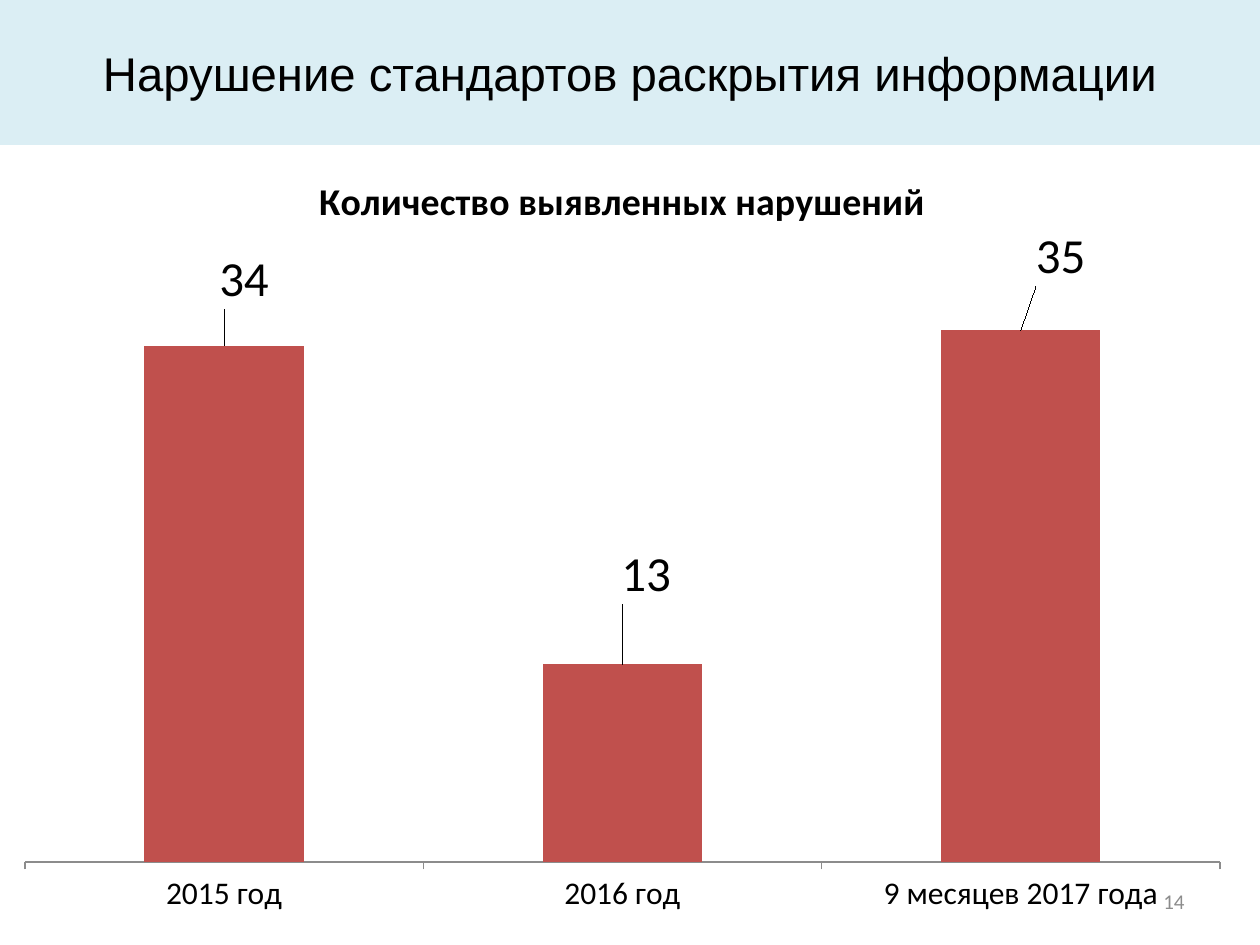
from lxml import etree
from pptx import Presentation
from pptx.chart.data import CategoryChartData
from pptx.dml.color import RGBColor
from pptx.enum import chart as ch, text
from pptx.oxml import ns
from pptx.util import Pt

BLACK = RGBColor(0x00, 0x00, 0x00)
GREY = RGBColor(0x8C, 0x8C, 0x8C)
PALE_BLUE = RGBColor(0xDB, 0xEE, 0xF4)
RED = RGBColor(0xC0, 0x50, 0x4D)


def style(font, size, color=BLACK, name="Calibri", bold=False):
    font.size, font.name, font.bold = Pt(size), name, bold
    font.color.rgb = color


def add_layout(parent, index, **settings):
    """Insert a manual chart layout into parent as the child at index."""
    layout = etree.Element(ns.qn("c:layout"))
    manual = etree.SubElement(layout, ns.qn("c:manualLayout"))
    for key, value in settings.items():
        etree.SubElement(manual, ns.qn(f"c:{key}")).set("val", str(value))
    for old in parent.findall(ns.qn("c:layout")):
        parent.remove(old)
    parent.insert(index, layout)


deck = Presentation()
deck.slide_width, deck.slide_height = Pt(720), Pt(540)
page = deck.slides.add_slide(deck.slide_layouts[5])

# Title band
title = page.shapes.title
title.left, title.top, title.width, title.height = Pt(0), Pt(0), Pt(720), Pt(82.8)
title.fill.solid()
title.fill.fore_color.rgb = PALE_BLUE
title.text_frame.text = "Нарушение стандартов раскрытия информации"
title.text_frame.vertical_anchor = text.MSO_ANCHOR.MIDDLE
heading = title.text_frame.paragraphs[0]
heading.alignment = text.PP_ALIGN.CENTER
style(heading.runs[0].font, 27, name="Arial")

# Column chart
series_name = "Количество выявленных нарушений"
data = CategoryChartData()
data.categories = ["2015 год", "2016 год", "9 месяцев 2017 года"]
data.add_series(series_name, [34, 13, 35])
chart = page.shapes.add_chart(
    ch.XL_CHART_TYPE.COLUMN_CLUSTERED, Pt(0), Pt(82.8), Pt(711.36), Pt(447.84), data
).chart
style(chart.font, 18)
chart.has_legend = False
chart.has_title = True
chart.chart_title.include_in_layout = False
chart.chart_title.text_frame.text = series_name
style(chart.chart_title.text_frame.paragraphs[0].runs[0].font, 21.6, bold=True)

values = chart.value_axis
values.minimum_scale, values.maximum_scale = 0, 40
values.has_major_gridlines = False
values.visible = False
categories = chart.category_axis
categories.major_tick_mark = ch.XL_TICK_MARK.OUTSIDE
categories.format.line.color.rgb = GREY
categories.format.line.width = Pt(0.75)

plot = chart.plots[0]
plot.gap_width = 150
plot.vary_by_categories = False
plot_area = chart.element.find(".//" + ns.qn("c:plotArea"))
add_layout(plot_area, 0, layoutTarget="inner", xMode="edge", yMode="edge",
           x=0.02, y=0.14, w=0.96, h=0.775)

series = plot.series[0]
series.format.fill.solid()
series.format.fill.fore_color.rgb = RED
label_shifts = [(0.016, -0.04), (0.019, -0.07), (0.032, -0.05)]
for index, (x, y) in enumerate(label_shifts):
    label = series.points[index].data_label
    style(label.font, 28)
    label.position = ch.XL_LABEL_POSITION.OUTSIDE_END
labels = series.data_labels
labels.show_value = True
style(labels.font, 28)
point_labels = chart.element.findall(".//" + ns.qn("c:dLbl"))
for point_label, (x, y) in zip(point_labels, label_shifts):
    add_layout(point_label, 1, x=x, y=y)

# Page number
number = page.shapes.add_textbox(Pt(516.24), Pt(500.4), Pt(167.76), Pt(28.8))
frame = number.text_frame
frame.word_wrap = True
frame.vertical_anchor = text.MSO_ANCHOR.MIDDLE
frame.text = "14"
frame.paragraphs[0].alignment = text.PP_ALIGN.RIGHT
style(frame.paragraphs[0].runs[0].font, 12, GREY)

deck.save("out.pptx")
